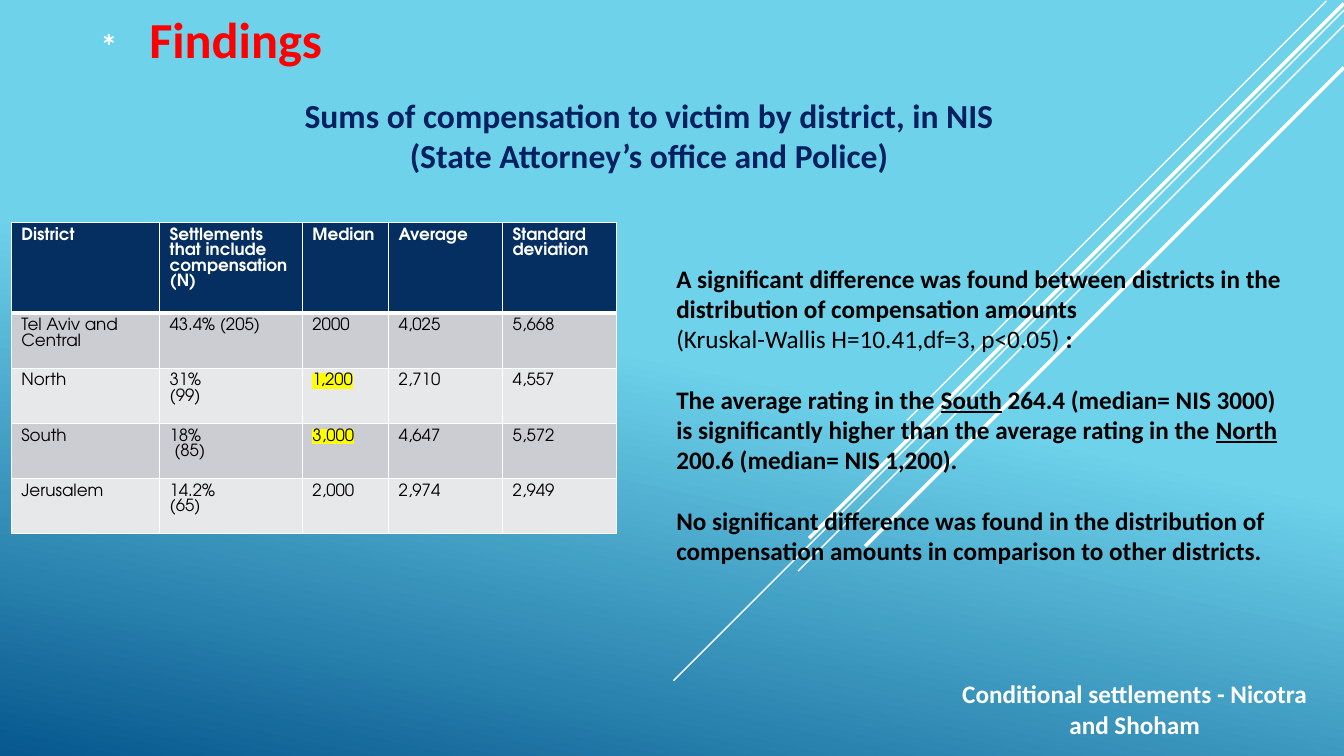
import pptx
import pptx.dml.color
import pptx.enum.shapes
import pptx.enum.text
import pptx.oxml
import pptx.oxml.ns
import pptx.util

Pt = pptx.util.Pt
RGBColor = pptx.dml.color.RGBColor
PP_ALIGN = pptx.enum.text.PP_ALIGN

WHITE = RGBColor(0xFF, 0xFF, 0xFF)
BLACK = RGBColor(0, 0, 0)
RED = RGBColor(0xFF, 0, 0)
YELLOW = RGBColor(0xFF, 0xFF, 0)
NAVY = RGBColor(0, 0x20, 0x60)
HEADER_BLUE = RGBColor(0x05, 0x2F, 0x61)
BANDS = (RGBColor(0xCC, 0xCD, 0xD2), RGBColor(0xE7, 0xE8, 0xEA))
SKY = RGBColor(0x6E, 0xD2, 0xEB)
DEEP_BLUE = RGBColor(0x06, 0x58, 0x8E)
TEXT_FONT = "Calibri"
TABLE_FONT = "TeX Gyre Adventor"

# Content: diagonal rays as (right x, top y, length along each axis, width)
RAYS = [
    (947.5, 0.7, 299.7, 1),
    (960, 7.2, 479, 1),
    (960, 18, 390, 1),
    (960, 2.5, 382, 2.5),
    (960, 48.2, 342, 2.5),
]

# Headings as (text, left, top, width, height, size, colour, alignment, line spacing)
HEADINGS = [
    ("Findings", 26.6, 2, 283.7, 52, 36, RED, PP_ALIGN.CENTER, 1),
    ("*", 64.8, 0, 821.5, 46, 24, WHITE, PP_ALIGN.LEFT, 1.5),
    ("Sums of compensation to victim by district, in NIS (State Attorney’s office and Police)",
     195.8, 64.2, 535.7, 87, 24, NAVY, PP_ALIGN.CENTER, 1),
    ("Conditional settlements - Nicotra and Shoham",
     670.5, 481.2, 280, 51, 18, WHITE, PP_ALIGN.CENTER, 1),
]

TABLE_LEFT, TABLE_TOP = 8, 159
COLUMN_WIDTHS = [106, 102, 61.5, 81.5, 81.5]
ROW_HEIGHTS = [64] + [39.4] * 4
DISTRICTS = [
    ("District", "Settlements that include compensation (N)", "Median", "Average",
     "Standard deviation"),
    ("Tel Aviv and Central", "43.4% (205)", "2000", "4,025", "5,668"),
    ("North", "31%\n(99)", "1,200", "2,710", "4,557"),
    ("South", "18%\n (85)", "3,000", "4,647", "5,572"),
    ("Jerusalem", "14.2%\n(65)", "2,000", "2,974", "2,949"),
]
HIGHLIGHTED = {"1,200", "3,000"}

# Conclusions: paragraphs of (text, bold, underlined); None is a line break
CONCLUSIONS = [
    [("A significant difference was found between districts in the distribution "
      "of compensation amounts ", True, False),
     None,
     ("(Kruskal-Wallis H=10.41,df=3, p<0.05)", False, False),
     (" :", True, False)],
    [("The average rating in the ", True, False),
     ("South", True, True),
     (" 264.4 (median= NIS 3000) is significantly higher than the average rating in the ",
      True, False),
     ("North", True, True),
     (" 200.6 (median= NIS 1,200).", True, False)],
    [("No significant difference was found in the distribution of compensation amounts "
      "in comparison to other districts.", True, False)],
]


def style(span, size, color, bold, face=TEXT_FONT):
    span.font.size = Pt(size)
    span.font.name = face
    span.font.bold = bold
    span.font.color.rgb = color


def xml(source):
    return pptx.oxml.parse_xml(source.replace(">", f' {pptx.oxml.ns.nsdecls("a")}>', 1))


def solid(color):
    return f'<a:solidFill><a:srgbClr val="{color}"/></a:solidFill>'


def highlight(span, color):
    fill = span.font.fill._xPr.find(pptx.oxml.ns.qn("a:solidFill"))
    fill.addnext(xml(f'<a:highlight><a:srgbClr val="{color}"/></a:highlight>'))


def add_borders(cell, top, bottom):
    properties = cell._tc.get_or_add_tcPr()
    for side, width in (("L", 1), ("R", 1), ("T", top), ("B", bottom)):
        properties.append(xml(f'<a:ln{side} w="{Pt(width)}">{solid(WHITE)}</a:ln{side}>'))


def add_text_box(page, left, top, width, height):
    box = page.shapes.add_textbox(Pt(left), Pt(top), Pt(width), Pt(height))
    box.text_frame.word_wrap = True
    return box.text_frame


def add_background(page):
    fill = page.background.fill
    fill.gradient()
    fill.gradient_angle = 258
    for stop, position, color in zip(fill.gradient_stops, (0.48, 1), (SKY, DEEP_BLUE)):
        stop.position = position
        stop.color.rgb = color


def add_rays(page):
    for right, top, length, width in RAYS:
        ray = page.shapes.add_connector(
            pptx.enum.shapes.MSO_CONNECTOR.STRAIGHT,
            Pt(right), Pt(top), Pt(right - length), Pt(top + length))
        ray.line.color.rgb = WHITE
        ray.line.width = Pt(width)
        ray._element.spPr.append(xml("<a:effectLst></a:effectLst>"))


def add_headings(page):
    for text, left, top, width, height, size, color, alignment, spacing in HEADINGS:
        frame = add_text_box(page, left, top, width, height)
        frame.text = text
        para = frame.paragraphs[0]
        para.alignment = alignment
        para.line_spacing = spacing
        style(para.runs[0], size, color, True)


def add_district_table(page):
    table = page.shapes.add_table(
        len(DISTRICTS), len(COLUMN_WIDTHS), Pt(TABLE_LEFT), Pt(TABLE_TOP),
        Pt(sum(COLUMN_WIDTHS)), Pt(sum(ROW_HEIGHTS))).table
    for column, width in zip(table.columns, COLUMN_WIDTHS):
        column.width = Pt(width)
    for index, (row, height, texts) in enumerate(zip(table.rows, ROW_HEIGHTS, DISTRICTS)):
        row.height = Pt(height)
        header = index == 0
        for cell, text in zip(row.cells, texts):
            add_borders(cell, 3 if index == 1 else 1, 3 if header else 1)
            cell.fill.solid()
            cell.fill.fore_color.rgb = HEADER_BLUE if header else BANDS[(index - 1) % 2]
            cell.text_frame.text = text
            for para in cell.text_frame.paragraphs:
                span = para.runs[0]
                style(span, 12, WHITE if header else BLACK, header, TABLE_FONT)
                if text in HIGHLIGHTED:
                    highlight(span, YELLOW)


def add_conclusions(page):
    frame = add_text_box(page, 476, 184.3, 448.6, 245)
    for index, parts in enumerate(CONCLUSIONS):
        para = frame.add_paragraph() if index else frame.paragraphs[0]
        para.space_before = Pt(21.7 if index else 0)
        for part in parts:
            if part is None:
                para.add_line_break()
                continue
            text, bold, underlined = part
            span = para.add_run()
            span.text = text
            style(span, 18, BLACK, bold)
            span.font.underline = underlined


def main():
    deck = pptx.Presentation()
    deck.slide_width, deck.slide_height = Pt(960), Pt(540)
    page = deck.slides.add_slide(deck.slide_layouts[6])
    add_background(page)
    add_rays(page)
    add_headings(page)
    add_district_table(page)
    add_conclusions(page)
    deck.save("out.pptx")


if __name__ == "__main__":
    main()
